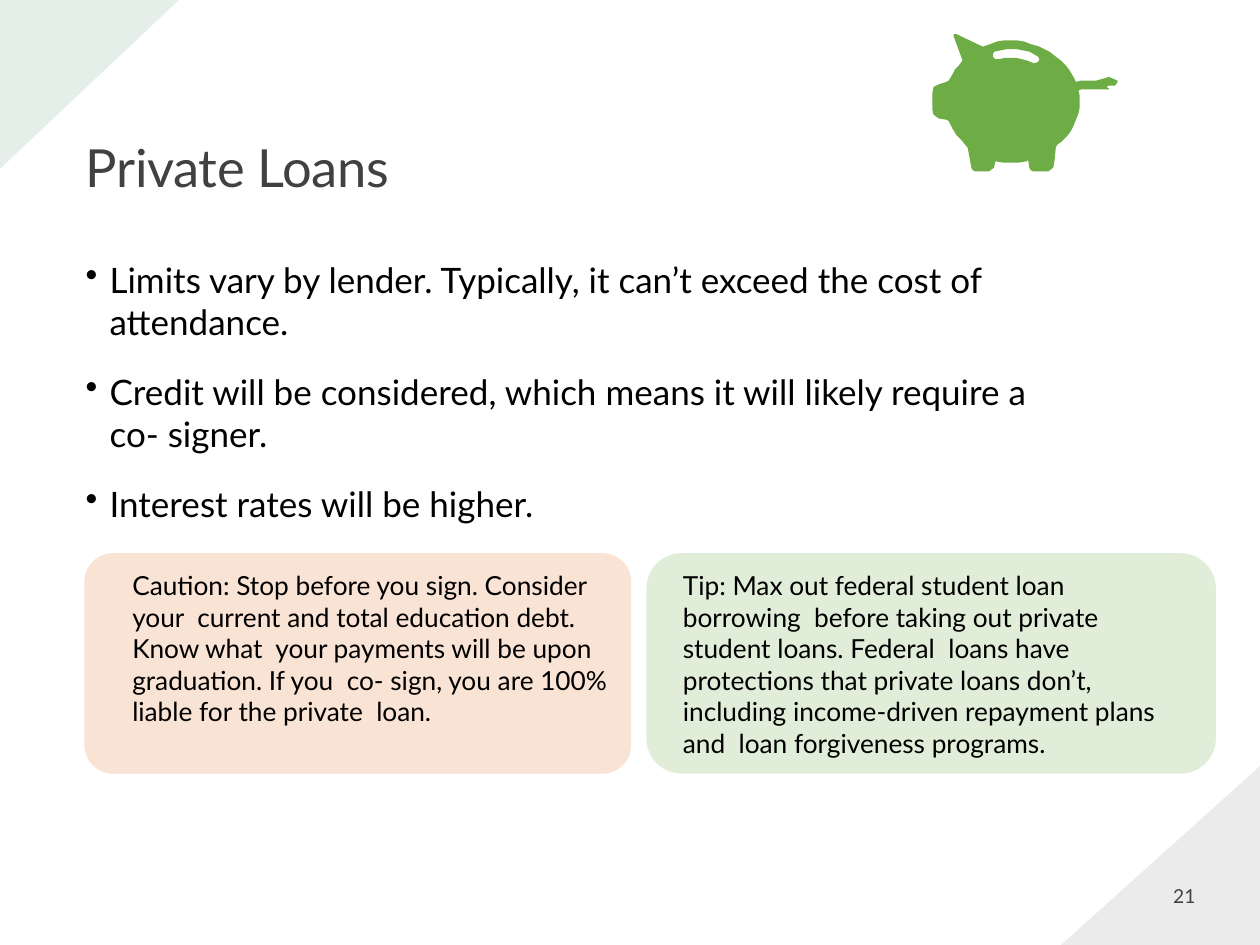
from dataclasses import dataclass

from lxml import etree
from pptx import Presentation
from pptx.dml.color import RGBColor
from pptx.enum.shapes import MSO_SHAPE
from pptx.enum.text import MSO_ANCHOR
from pptx.oxml.ns import qn
from pptx.util import Inches, Pt

ROUND = MSO_SHAPE.ROUNDED_RECTANGLE
WEDGE = MSO_SHAPE.RIGHT_TRIANGLE
TOP = MSO_ANCHOR.TOP
BOTTOM = MSO_ANCHOR.BOTTOM
FONT = "Lato"
BLACK = "000000"
GREY = "414042"
GREEN = "6EAC46"


@dataclass
class Box:
    left: float
    top: float
    width: float
    height: float

    def place(self) -> list:
        return [Inches(v) for v in (self.left, self.top, self.width, self.height)]


@dataclass
class Panel:
    box: Box
    fill: str
    curve: float


@dataclass
class Corner:
    box: Box
    turn: int
    fill: str


@dataclass
class Note:
    box: Box
    lines: list[str]
    size: int
    color: str = BLACK
    indent: float = 0.01
    bullet: bool = False
    anchor: MSO_ANCHOR = TOP
    track: int = 0


CORNERS = [
    Corner(Box(8.5, 6, 1.42, 1.58), 270, GREY),
    Corner(Box(0.04, -0.04, 1.34, 1.42), 90, "056839"),
]
PANELS = [
    Panel(Box(5.13, 4.39, 4.52, 1.75), "E0EED9", 0.16),
    Panel(Box(0.67, 4.39, 4.34, 1.75), "F9E3D4", 0.13),
]
NOTES = [
    Note(Box(0.67, 1.05, 2.68, 0.52), ["Private Loans"], 30, GREY,
         anchor=BOTTOM, track=-20),
    Note(Box(0.67, 2.04, 7.84, 2.15), [
        "Limits vary by lender. Typically, it can’t exceed the cost of attendance.",
        "Credit will be considered, which means it will likely require a co- signer.",
        "Interest rates will be higher.",
    ], 20, indent=0.2, bullet=True),
    Note(Box(5.41, 4.51, 4.02, 1.53), [
        "Tip: Max out federal student loan borrowing  before taking out private "
        "student loans. Federal  loans have protections that private loans don’t, "
        "including income-driven repayment plans and  loan forgiveness programs."
    ], 15),
    Note(Box(9.27, 7.01, 0.25, 0.21), ["21"], 11, GREY, indent=0.04),
    Note(Box(1.04, 4.51, 3.8, 1.28), [
        "Caution: Stop before you sign. Consider your  current and total education "
        "debt. Know what  your payments will be upon graduation. If you  co- sign, "
        "you are 100% liable for the private  loan."
    ], 15),
]

BODY = [
    (854, 65), (852, 61), (849, 56), (846, 52), (842, 48), (838, 45), (833, 41),
    (829, 39), (825, 37), (818, 35), (813, 33), (807, 32), (802, 32), (797, 32),
    (791, 33), (786, 35), (780, 37), (759, 27), (757, 27), (757, 29), (764, 48),
    (761, 52), (758, 55), (756, 59), (753, 64), (751, 65), (745, 67), (741, 69),
    (740, 74), (740, 87), (741, 91), (745, 94), (751, 95), (753, 96), (756, 102),
    (759, 107), (763, 111), (767, 116), (768, 117), (771, 133), (772, 135),
    (774, 136), (785, 136), (789, 133), (790, 128), (796, 129), (802, 129),
    (809, 129), (815, 128), (816, 127), (837, 127), (838, 117), (839, 115),
    (843, 112), (847, 108), (850, 104), (852, 100), (854, 95), (856, 90),
    (857, 85), (857, 76), (856, 72), (858, 71), (863, 71), (880, 71), (880, 70),
    (878, 69), (880, 68), (885, 68), (887, 65), (887, 64), (880, 61), (877, 62),
    (870, 64), (863, 64), (858, 64),
]
SLOT = [
    (825, 47), (824, 49), (822, 50), (820, 50), (815, 48), (811, 47), (807, 46),
    (802, 46), (797, 46), (793, 47), (790, 47), (788, 45), (788, 43), (789, 41),
    (794, 40), (799, 39), (807, 39), (812, 40), (817, 41), (824, 45),
]
LEG = [
    (837, 127), (816, 127), (817, 133), (818, 135), (820, 136), (832, 136),
    (836, 133),
]


def tint(color: str) -> RGBColor:
    return RGBColor.from_string(color)


def paint(shape, color: str) -> None:
    shape.shadow.inherit = False
    shape.fill.solid()
    shape.fill.fore_color.rgb = tint(color)
    shape.line.fill.background()


def draw_corner(slide, corner: Corner) -> None:
    shape = slide.shapes.add_shape(WEDGE, *corner.box.place())
    shape.rotation = corner.turn
    paint(shape, corner.fill)
    for node in shape.fill._xPr.iter(qn("a:srgbClr")):
        etree.SubElement(node, qn("a:alpha"), val="10000")


def draw_panel(slide, panel: Panel) -> None:
    shape = slide.shapes.add_shape(ROUND, *panel.box.place())
    shape.adjustments[0] = panel.curve
    paint(shape, panel.fill)


def draw_form(slide, loops: list, color: str) -> None:
    first, *rest = loops
    form = slide.shapes.build_freeform(*first[0], scale=Inches(0.01))
    form.add_line_segments(first[1:], close=True)
    for loop in rest:
        form.move_to(*loop[0])
        form.add_line_segments(loop[1:], close=True)
    paint(form.convert_to_shape(), color)


def draw_note(slide, note: Note) -> None:
    frame = slide.shapes.add_textbox(*note.box.place()).text_frame
    frame.word_wrap = True
    frame.vertical_anchor = note.anchor
    frame.margin_left = frame.margin_right = frame.margin_bottom = 0
    frame.margin_top = Inches(0.01)
    frame.text = "\n".join(note.lines)
    for index, para in enumerate(frame.paragraphs):
        props = para._p.get_or_add_pPr()
        props.set("marL", str(Inches(note.indent)))
        if note.bullet:
            props.set("indent", str(Inches(-0.19)))
            etree.SubElement(props, qn("a:buChar"), char="•")
        if index:
            para.space_before = Pt(16)
        for run in para.runs:
            run.font.name = FONT
            run.font.size = Pt(note.size)
            run.font.color.rgb = tint(note.color)
            run._r.get_or_add_rPr().set("spc", str(note.track))


def main() -> None:
    deck = Presentation()
    deck.slide_width = Inches(10)
    deck.slide_height = Inches(7.5)
    slide = deck.slides.add_slide(deck.slide_layouts[6])
    for corner in CORNERS:
        draw_corner(slide, corner)
    for panel in PANELS:
        draw_panel(slide, panel)
    draw_form(slide, [BODY, SLOT], GREEN)
    draw_form(slide, [LEG], GREEN)
    for note in NOTES:
        draw_note(slide, note)
    deck.save("out.pptx")


if __name__ == "__main__":
    main()
